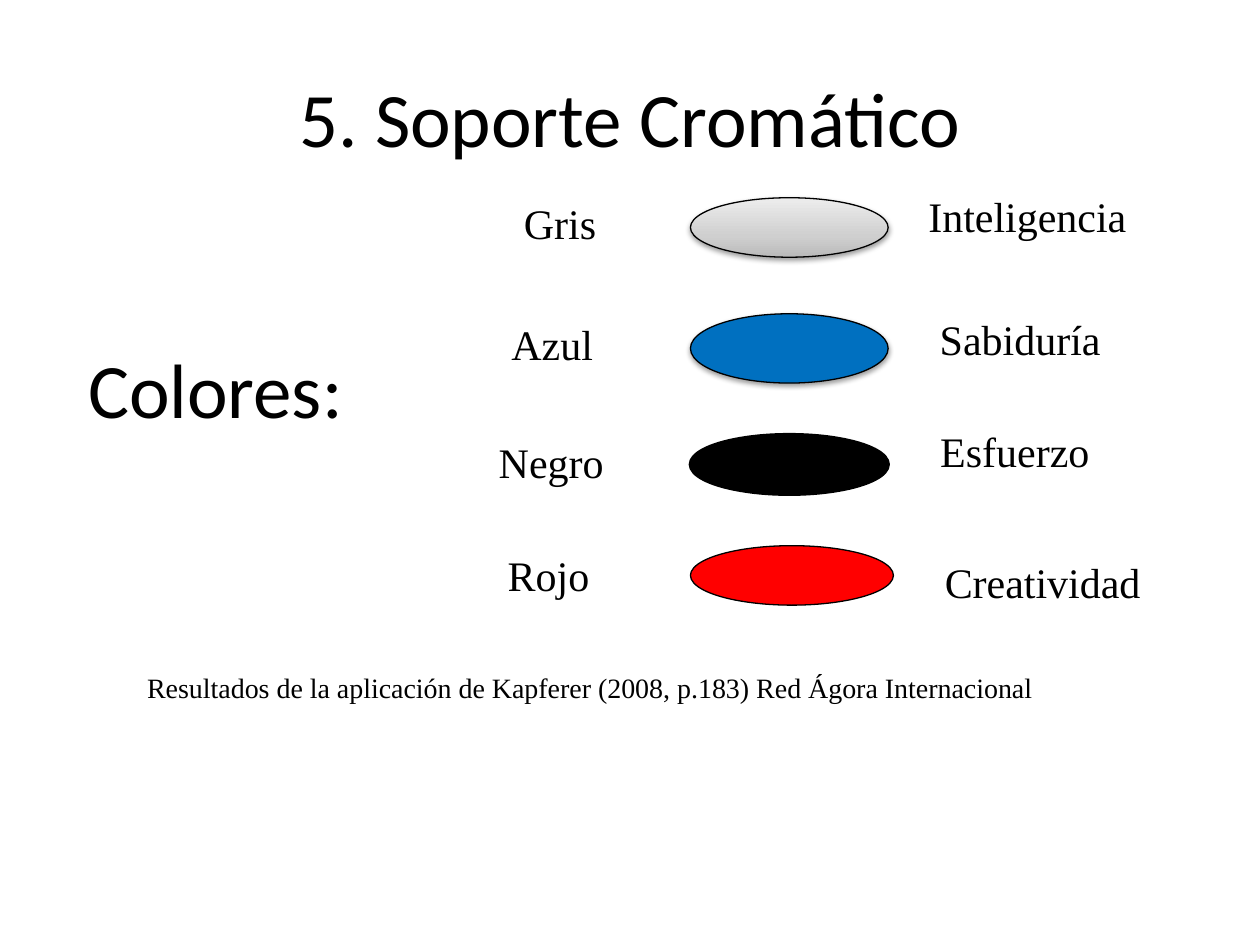
from pptx import Presentation
from pptx.dml.color import RGBColor
from pptx.enum.shapes import MSO_SHAPE as Shape
from pptx.enum.text import MSO_ANCHOR as Anchor, PP_ALIGN as Align
from pptx.oxml.ns import qn
from pptx.util import Pt
from lxml.etree import SubElement

COLORS = {
    "black": "000000",
    "blue": "0070C0",
    "red": "FF0000",
    "gray_dark": "BABABA",
    "gray_mid": "CFCFCF",
    "gray_light": "EDEDED",
}
GRAY_STOPS = [(0, "gray_dark"), (35, "gray_mid"), (100, "gray_light")]
HEADING_FONT, BODY_FONT = "Calibri", "Times New Roman"
OVAL_LEFT = 394.56
LABEL_HEIGHT = 36

COLOR_NAMES = [
    ("Gris", 292.3, 109.4, 136),
    ("Azul", 285.1, 178.6, 79),
    ("Negro", 277.9, 246.2, 79),
    ("Rojo", 283, 310.3, 85),
]
MEANINGS = [
    ("Inteligencia", 523.4, 105.1, 132),
    ("Sabiduría", 529.9, 175.7, 125),
    ("Esfuerzo", 530.2, 239.8, 178),
    ("Creatividad", 532.8, 314.6, 130),
]
OVALS = [
    (113, 113, 34, "gray", 0.75, True),
    (179.3, 113, 39.6, "blue", 0.75, True),
    (248.4, 113, 34, "black", 2, False),
    (311.8, 116, 34, "red", 0.75, False),
]


def rgb(name):
    return RGBColor.from_string(COLORS[name])


def add_text(page, text, left, top, width, height, size, font=BODY_FONT):
    box = page.shapes.add_textbox(Pt(left), Pt(top), Pt(width), Pt(height))
    frame = box.text_frame
    frame.word_wrap = True
    frame.text = text
    span = frame.paragraphs[0].runs[0]
    span.font.size = Pt(size)
    span.font.name = font
    span.font.color.rgb = rgb("black")
    return frame


def fill_gray(oval):
    oval.fill.gradient()
    oval.fill.gradient_angle = 90
    stops = next(oval._element.spPr.iter(qn("a:gsLst")))
    stops.clear()
    for position, color in GRAY_STOPS:
        stop = SubElement(stops, qn("a:gs"), pos=str(position * 1000))
        SubElement(stop, qn("a:srgbClr"), val=COLORS[color])


def add_shadow(oval):
    effects = oval._element.spPr.find(qn("a:effectLst"))
    shadow = SubElement(effects, qn("a:outerShdw"), blurRad=str(Pt(3.1)),
                        dist=str(Pt(1.6)), dir="5400000", rotWithShape="0")
    color = SubElement(shadow, qn("a:srgbClr"), val=COLORS["black"])
    SubElement(color, qn("a:alpha"), val="38000")


def add_oval(page, top, width, height, color, line_width, shadowed):
    oval = page.shapes.add_shape(Shape.OVAL, Pt(OVAL_LEFT), Pt(top), Pt(width), Pt(height))
    oval.shadow.inherit = False
    if color == "gray":
        fill_gray(oval)
    else:
        oval.fill.solid()
        oval.fill.fore_color.rgb = rgb(color)
    oval.line.color.rgb = rgb("black")
    oval.line.width = Pt(line_width)
    if shadowed:
        add_shadow(oval)


def main():
    deck = Presentation()
    deck.slide_width, deck.slide_height = Pt(720), Pt(540)
    page = deck.slides.add_slide(deck.slide_layouts[6])

    title = add_text(page, "5. Soporte Cromático", 36, 21.6, 648, 90, 44, HEADING_FONT)
    title.vertical_anchor = Anchor.MIDDLE
    title.paragraphs[0].alignment = Align.CENTER
    add_text(page, "Colores:", 43.2, 191.5, 164.2, 60.5, 44, HEADING_FONT)

    for oval in OVALS:
        add_oval(page, *oval)
    for text, left, top, width in COLOR_NAMES + MEANINGS:
        add_text(page, text, left, top, width, LABEL_HEIGHT, 24)

    add_text(page, "Resultados de la aplicación de Kapferer (2008, p.183) Red Ágora Internacional",
             77, 379.4, 543.6, 26.6, 16)
    deck.save("out.pptx")


if __name__ == "__main__":
    main()
